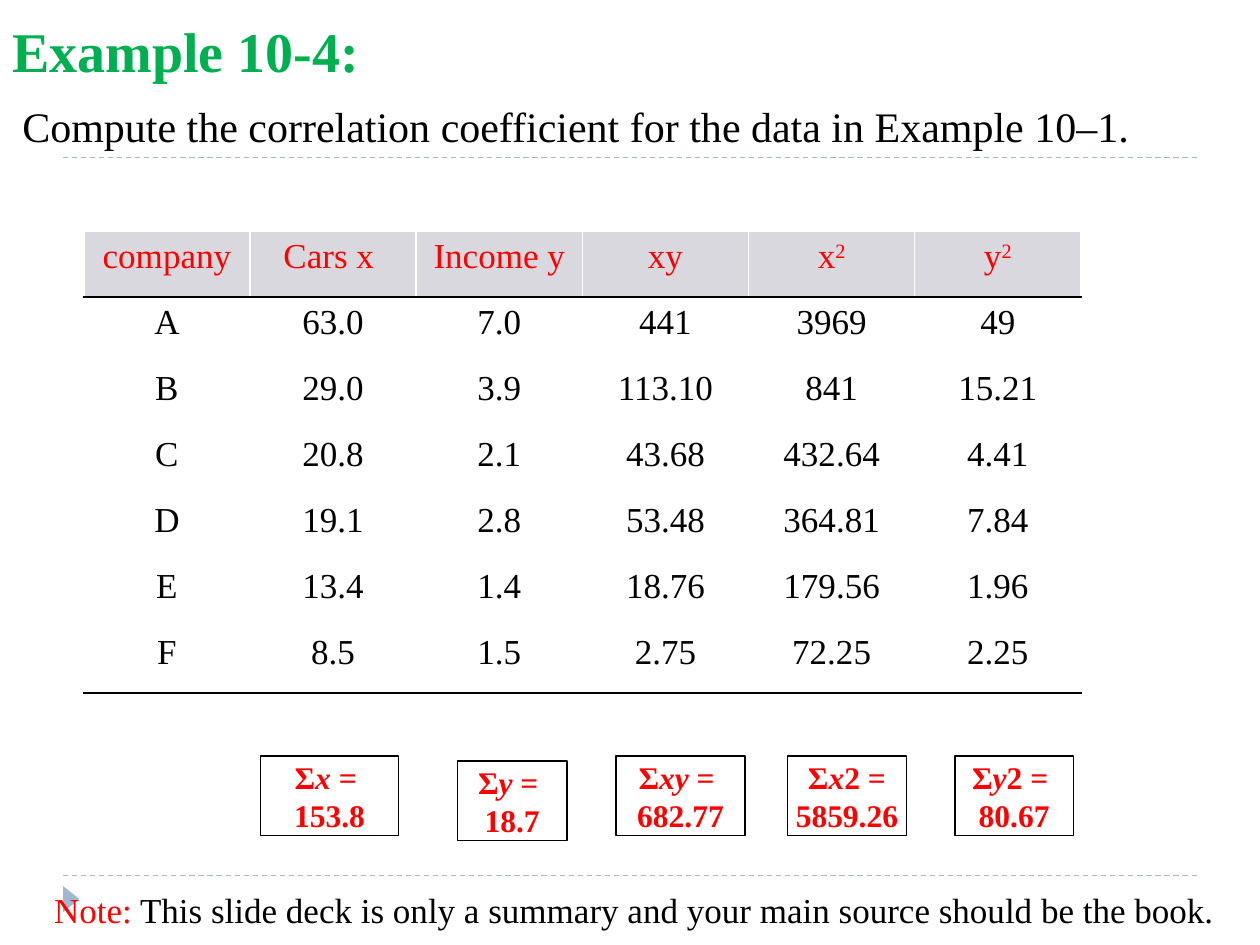
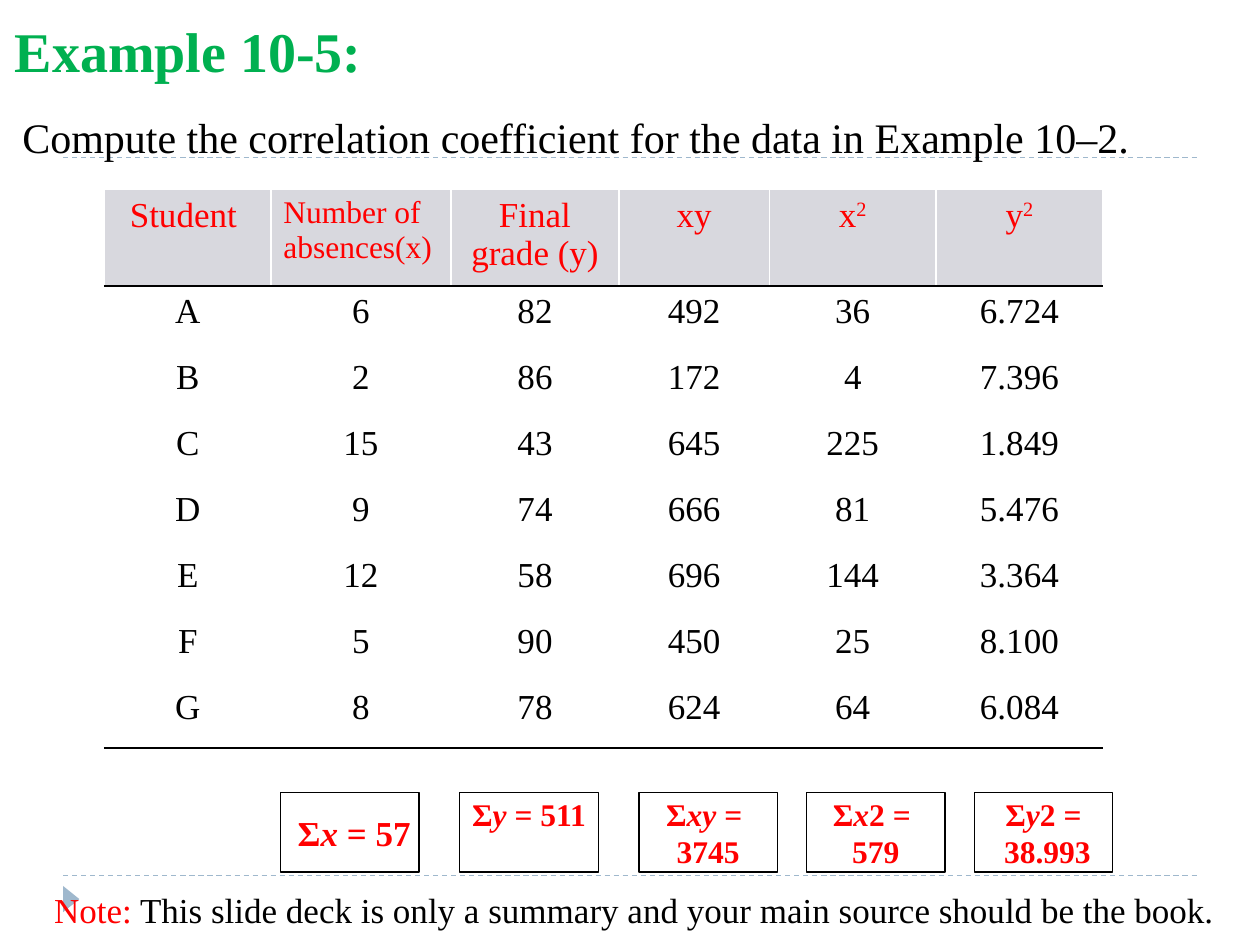
from dataclasses import dataclass
from typing import NamedTuple

from pptx import Presentation
from pptx.dml.color import RGBColor
from pptx.enum.dml import MSO_LINE
from pptx.enum.shapes import MSO_CONNECTOR, MSO_SHAPE
from pptx.enum.text import MSO_ANCHOR, PP_ALIGN
from pptx.oxml.ns import qn
from pptx.slide import Slide
from pptx.table import _Cell as Cell
from pptx.text.text import _Paragraph as Para
from pptx.util import Cm, Pt
from lxml.etree import SubElement


@dataclass(frozen=True)
class Theme:
    font: str = "Times New Roman"
    title: str = "00B050"
    accent: str = "FF0000"
    ink: str = "000000"
    paper: str = "FFFFFF"
    header: str = "D8D8DE"
    rule: str = "9FB8CD"
    title_size: int = 32
    task_size: int = 24
    body_size: int = 20
    small_size: int = 18
    border: float = 1
    outline: float = 0.75
    veil: int = 47  # opacity of the see-through boxes, percent


THEME = Theme()


class Span(NamedTuple):
    text: str
    italic: bool = False
    raised: bool = False
    color: str | None = None


@dataclass(frozen=True)
class Heading:
    spans: tuple[Span, ...]
    size: int = THEME.body_size
    align: PP_ALIGN = PP_ALIGN.CENTER


@dataclass(frozen=True)
class Grid:
    left: float
    top: float
    widths: tuple[float, ...]
    header_height: float
    headings: tuple[Heading, ...]
    rows: tuple[str, ...]  # one row each, values parted by blanks
    row_height: float = 1.33


@dataclass(frozen=True)
class SumBox:
    left: float
    top: float
    width: float
    lines: tuple[tuple[Span, ...], ...]
    size: int = THEME.small_size
    veiled: bool = True
    anchor: MSO_ANCHOR = MSO_ANCHOR.MIDDLE
    height: float = 1.6


@dataclass(frozen=True)
class Example:
    title: str
    title_left: float
    task: str
    task_top: float
    grid: Grid
    sums: tuple[SumBox, ...]


# Text helpers
def rgb(color: str) -> RGBColor:
    return RGBColor.from_string(color)


def write(para: Para, spans: tuple[Span, ...], size: int, color: str,
          bold: bool = False, align: PP_ALIGN = PP_ALIGN.LEFT) -> None:
    para.alignment = align
    font = para.font
    font.name, font.size, font.bold = THEME.font, Pt(size), bold
    font.color.rgb = rgb(color)
    for span in spans:
        run = para.add_run()
        run.text = span.text
        if span.italic:
            run.font.italic = True
        if span.raised:
            run._r.get_or_add_rPr().set("baseline", "30000")
        if span.color:
            run.font.color.rgb = rgb(span.color)


def add_text(page: Slide, left: float, top: float, width: float, height: float,
             spans: tuple[Span, ...], size: int, color: str,
             bold: bool = False, wrap: bool = True) -> None:
    box = page.shapes.add_textbox(Cm(left), Cm(top), Cm(width), Cm(height))
    box.text_frame.word_wrap = wrap
    write(box.text_frame.paragraphs[0], spans, size, color, bold)


# Shared frame: dashed rules, corner marker, footer note
def add_frame(page: Slide) -> None:
    for y in (17.65, 3.18):
        rule = page.shapes.add_connector(
            MSO_CONNECTOR.STRAIGHT, Cm(1.27), Cm(y), Cm(24.13), Cm(y))
        rule.line.color.rgb = rgb(THEME.rule)
        rule.line.width = Pt(THEME.outline)
        rule.line.dash_style = MSO_LINE.DASH
        SubElement(rule._element.spPr, qn("a:effectLst"))
    marker = page.shapes.add_shape(
        MSO_SHAPE.ISOSCELES_TRIANGLE, Cm(1.17), Cm(17.96), Cm(0.53), Cm(0.33))
    marker.rotation = 90
    marker.shadow.inherit = False
    marker.fill.solid()
    marker.fill.fore_color.rgb = rgb(THEME.rule)
    marker.line.fill.background()


def add_note(page: Slide) -> None:
    spans = (Span("Note:", color=THEME.accent),
             Span(" This slide deck is only a summary and your main source"
                  " should be the book."))
    add_text(page, 0.84, 17.78, 24.5, 1.12, spans, THEME.body_size, THEME.ink)


# Data table
def style_cell(cell: Cell, fill: str, top: str, bottom: str) -> None:
    edges = {"a:lnL": THEME.paper, "a:lnR": THEME.paper,
             "a:lnT": top, "a:lnB": bottom}
    props = cell._tc.get_or_add_tcPr()
    for tag, color in edges.items():
        edge = SubElement(props, qn(tag), w=str(Pt(THEME.border)))
        solid = SubElement(edge, qn("a:solidFill"))
        SubElement(solid, qn("a:srgbClr"), val=color)
    cell.fill.solid()
    cell.fill.fore_color.rgb = rgb(fill)


def add_grid(page: Slide, grid: Grid) -> None:
    last = len(grid.rows)
    height = grid.header_height + last * grid.row_height
    table = page.shapes.add_table(
        last + 1, len(grid.widths), Cm(grid.left), Cm(grid.top),
        Cm(sum(grid.widths)), Cm(height)).table
    table.first_row = table.horz_banding = False
    for column, width in zip(table.columns, grid.widths):
        column.width = Cm(width)
    for number, row in enumerate(table.rows):
        row.height = Cm(grid.row_height if number else grid.header_height)
    for column, heading in enumerate(grid.headings):
        cell = table.cell(0, column)
        style_cell(cell, THEME.header, THEME.paper, THEME.ink)
        write(cell.text_frame.paragraphs[0], heading.spans, heading.size,
              THEME.accent, align=heading.align)
    for number, row in enumerate(grid.rows, start=1):
        top = THEME.ink if number == 1 else THEME.paper
        bottom = THEME.ink if number == last else THEME.paper
        for column, value in enumerate(row.split()):
            cell = table.cell(number, column)
            style_cell(cell, THEME.paper, top, bottom)
            write(cell.text_frame.paragraphs[0], (Span(value),),
                  THEME.body_size, THEME.ink, align=PP_ALIGN.CENTER)


# Boxes with the column sums
def add_sum(page: Slide, item: SumBox) -> None:
    box = page.shapes.add_shape(
        MSO_SHAPE.RECTANGLE, Cm(item.left), Cm(item.top),
        Cm(item.width), Cm(item.height))
    box.shadow.inherit = False
    box.fill.solid()
    box.fill.fore_color.rgb = rgb(THEME.paper)
    if item.veiled:
        color = box._element.spPr.find(qn("a:solidFill"))[0]
        SubElement(color, qn("a:alpha"), val=str(THEME.veil * 1000))
    box.line.color.rgb = rgb(THEME.ink)
    box.line.width = Pt(THEME.outline)
    frame = box.text_frame
    frame.word_wrap = False
    frame.vertical_anchor = item.anchor
    frame.margin_top = frame.margin_bottom = Cm(0.04)
    for number, spans in enumerate(item.lines):
        para = frame.add_paragraph() if number else frame.paragraphs[0]
        write(para, spans, item.size, THEME.accent, True, PP_ALIGN.CENTER)


def sum_lines(name: str, tail: str, value: str = "",
              lead: str = "") -> tuple[tuple[Span, ...], ...]:
    formula = (Span(lead + "Σ"), Span(name, italic=True), Span(tail))
    return (formula, (Span(value),)) if value else (formula,)


def add_example(page: Slide, example: Example) -> None:
    add_frame(page)
    add_text(page, example.title_left, 0.2, 7.57, 1.63, (Span(example.title),),
             THEME.title_size, THEME.title, bold=True, wrap=False)
    add_text(page, 0.2, example.task_top, 23.5, 1.47, (Span(example.task),),
             THEME.task_size, THEME.ink)
    add_grid(page, example.grid)
    for item in example.sums:
        add_sum(page, item)
    add_note(page)


# Content
def plain(text: str) -> Heading:
    return Heading((Span(text),))


def squared(name: str) -> Heading:
    return Heading((Span(name), Span("2", raised=True)))


PRODUCTS = (plain("xy"), squared("x"), squared("y"))

CARS = Example(
    "Example 10-4:", 0,
    "Compute the correlation coefficient for the data in Example 10–1.", 1.91,
    Grid(1.69, 4.66, (3.35,) * 6, 1.33,
         (plain("company"), plain("Cars x "), plain("Income y"), *PRODUCTS),
         ("A 63.0 7.0 441 3969 49",
          "B 29.0 3.9 113.10 841 15.21",
          "C 20.8 2.1 43.68 432.64 4.41",
          "D 19.1 2.8 53.48 364.81 7.84",
          "E 13.4 1.4 18.76 179.56 1.96",
          "F 8.5 1.5 2.75 72.25 2.25")),
    (SumBox(5.25, 15.24, 2.79, sum_lines("x", " = ", "153.8")),
     SumBox(9.22, 15.34, 2.21, sum_lines("y", " = ", "18.7"), veiled=False),
     SumBox(12.42, 15.24, 2.6, sum_lines("xy", " = ", "682.77"), veiled=False),
     SumBox(15.88, 15.24, 2.39, sum_lines("x", "2 = ", "5859.26", lead=" "),
            veiled=False),
     SumBox(19.25, 15.24, 2.39, sum_lines("y", "2 = ", "80.67"), veiled=False)))

SUM_TOP, SUM_WIDTH = 15.98, 2.79
ABSENCES = Example(
    "Example 10-5:", 0.05,
    "Compute the correlation coefficient for the data in Example 10–2.", 2.12,
    Grid(2.11, 3.82, (3.35, 3.63, 3.39, 3.03, 3.36, 3.36), 1.92,
         (plain("Student "),
          Heading((Span("Number of absences(x)"),), THEME.small_size,
                  PP_ALIGN.LEFT),
          plain("Final grade (y)"), *PRODUCTS),
         ("A 6 82 492 36 6.724",
          "B 2 86 172 4 7.396",
          "C 15 43 645 225 1.849",
          "D 9 74 666 81 5.476",
          "E 12 58 696 144 3.364",
          "F 5 90 450 25 8.100",
          "G 8 78 624 64 6.084")),
    (SumBox(5.66, SUM_TOP, SUM_WIDTH, sum_lines("x", " = 57", lead=" "),
            THEME.body_size),
     SumBox(9.27, SUM_TOP, SUM_WIDTH, sum_lines("y", " = 511"),
            anchor=MSO_ANCHOR.TOP),
     SumBox(12.88, SUM_TOP, SUM_WIDTH, sum_lines("xy", " = ", "3745")),
     SumBox(16.26, SUM_TOP, SUM_WIDTH, sum_lines("x", "2 = ", "579")),
     SumBox(19.64, SUM_TOP, SUM_WIDTH, sum_lines("y", "2 =", " 38.993"))))


def main() -> None:
    deck = Presentation()
    deck.slide_width, deck.slide_height = Cm(25.4), Cm(19.05)
    for example in (CARS, ABSENCES):
        add_example(deck.slides.add_slide(deck.slide_layouts[6]), example)
    deck.save("out.pptx")


if __name__ == "__main__":
    main()
